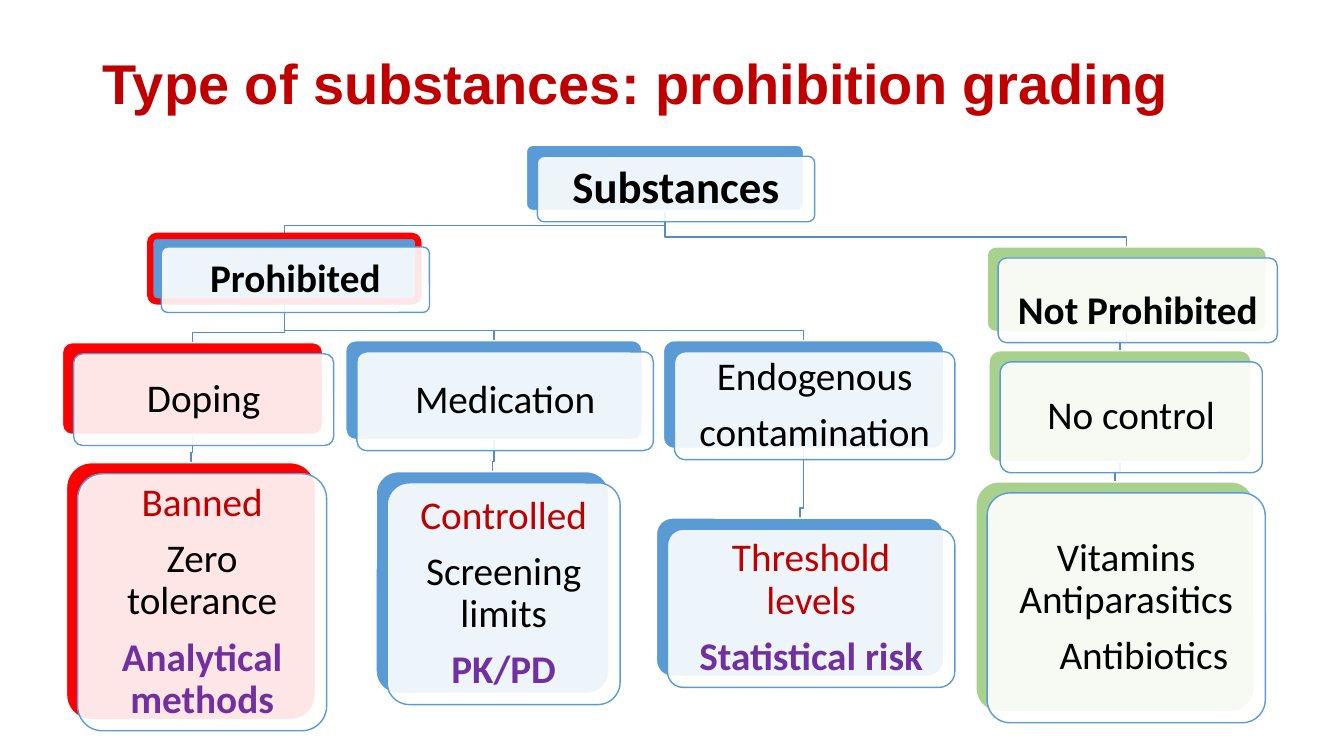
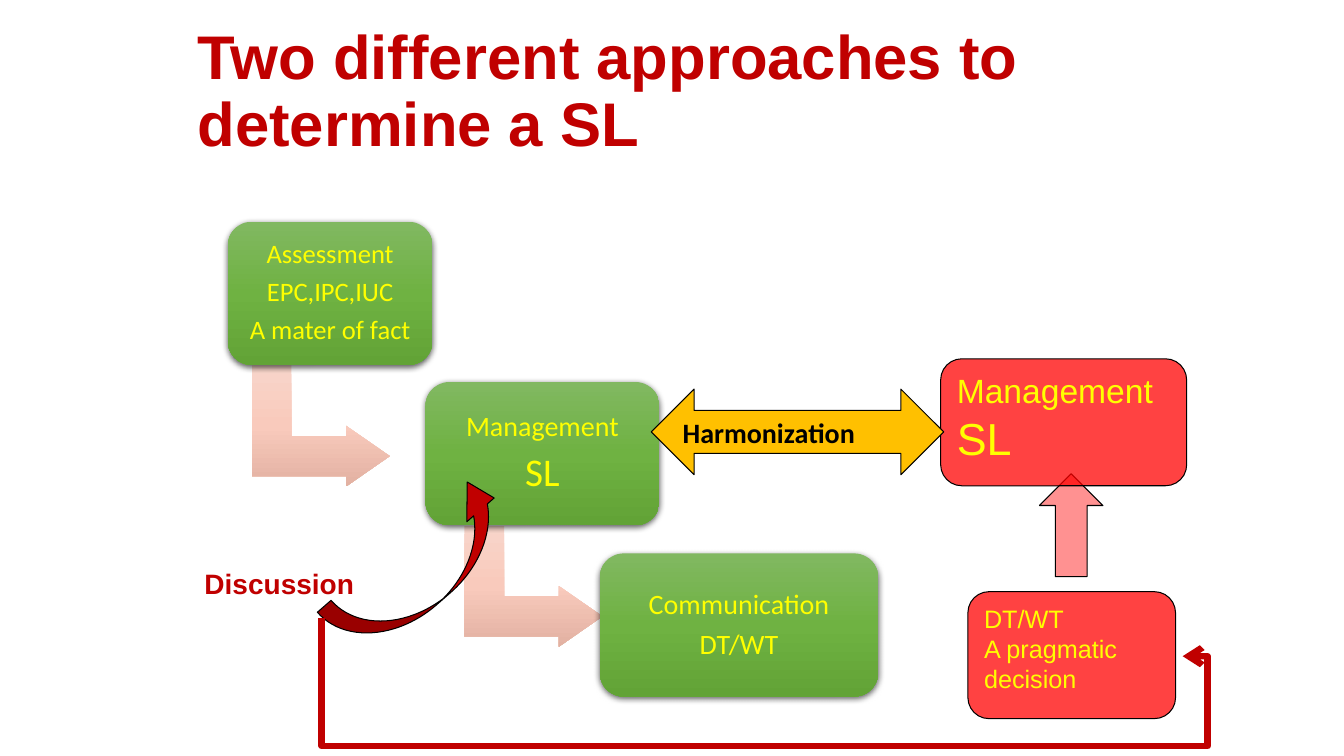
from lxml import etree
from pptx import Presentation
from pptx.dml.color import RGBColor
from pptx.enum.shapes import MSO_CONNECTOR, MSO_SHAPE
from pptx.enum.text import MSO_ANCHOR, MSO_AUTO_SIZE, PP_ALIGN
from pptx.oxml.ns import qn
from pptx.util import Inches, Pt

ROUNDED = MSO_SHAPE.ROUNDED_RECTANGLE
BENT_ARROW = MSO_SHAPE.BENT_UP_ARROW
UP_ARROW = MSO_SHAPE.UP_ARROW
DOUBLE_ARROW = MSO_SHAPE.LEFT_RIGHT_ARROW
CURVED_ARROW = MSO_SHAPE.CURVED_UP_ARROW
ELBOW = MSO_CONNECTOR.ELBOW
LEFT, CENTER = PP_ALIGN.LEFT, PP_ALIGN.CENTER
TOP, MIDDLE = MSO_ANCHOR.TOP, MSO_ANCHOR.MIDDLE
NO_FIT, GROW = MSO_AUTO_SIZE.NONE, MSO_AUTO_SIZE.SHAPE_TO_FIT_TEXT

WHITE = RGBColor(0xFF, 0xFF, 0xFF)
BLACK = RGBColor(0, 0, 0)
CRIMSON = RGBColor(0xC0, 0, 0)
RED = RGBColor(0xFF, 0, 0)
BLUE = RGBColor(0x5B, 0x9B, 0xD5)
LINK_BLUE = RGBColor(0x53, 0x8D, 0xC1)
GREEN = RGBColor(0xA9, 0xD1, 0x8E)
PURPLE = RGBColor(0x70, 0x30, 0xA0)
YELLOW = RGBColor(0xFF, 0xFF, 0)
AMBER = RGBColor(0xFF, 0xC0, 0)
GREEN_STOPS = ((0, "81B861"), (50, "6FB242"), (100, "62A336"))
PEACH_STOPS = ((0, "F8D5CA"), (50, "F9CABC"), (100, "E2B1A2"))

HEADING, BODY = "Arial", "Calibri"
CARD_OFFSET = 0.11
LINK_DROP = 0.1
SPACING = 0.35

SUBSTANCES = (5.22, 1.44, 2.75, 0.65)
PROHIBITED = (1.49, 2.34, 2.66, 0.65)
NOT_PROHIBITED = (9.79, 2.45, 2.77, 0.84)
DOPING = (0.62, 3.4, 2.58, 0.91)
MEDICATION = (3.43, 3.38, 2.94, 0.98)
ENDOGENOUS = (6.58, 3.38, 2.78, 1.07)
NO_CONTROL = (9.81, 3.48, 2.6, 1.1)
BANNED = (0.66, 4.59, 2.47, 2.55)
CONTROLLED = (3.73, 4.68, 2.31, 2.2)
THRESHOLD = (6.51, 5.14, 2.85, 1.57)
VITAMINS = (9.68, 4.78, 2.76, 2.28)

LINKS = (
    (VITAMINS, NO_CONTROL), (NO_CONTROL, NOT_PROHIBITED),
    (NOT_PROHIBITED, SUBSTANCES), (THRESHOLD, ENDOGENOUS),
    (ENDOGENOUS, PROHIBITED), (CONTROLLED, MEDICATION),
    (MEDICATION, PROHIBITED), (BANNED, DOPING),
    (DOPING, PROHIBITED), (PROHIBITED, SUBSTANCES),
)
CARDS = (
    (SUBSTANCES, BLUE, [("Substances", 32, BLACK, True)]),
    (PROHIBITED, BLUE, [("Prohibited", 28, BLACK, True)]),
    (DOPING, RED, [("Doping", 28, BLACK, False)]),
    (BANNED, RED, [("Banned", 28, CRIMSON, False),
                   ("Zero tolerance", 28, BLACK, False),
                   ("Analytical methods", 28, PURPLE, True)]),
    (MEDICATION, BLUE, [("Medication", 28, BLACK, False)]),
    (CONTROLLED, BLUE, [("Controlled", 28, CRIMSON, False),
                        ("Screening limits", 28, BLACK, False),
                        ("PK/PD", 28, PURPLE, True)]),
    (ENDOGENOUS, BLUE, [("Endogenous", 28, BLACK, False),
                        ("contamination", 28, BLACK, False)]),
    (THRESHOLD, BLUE, [("Threshold levels", 28, CRIMSON, False),
                       ("Statistical risk", 28, PURPLE, True)]),
    (NOT_PROHIBITED, GREEN, [("Not Prohibited", 28, BLACK, True)]),
    (NO_CONTROL, GREEN, [("No control", 28, BLACK, False)]),
    (VITAMINS, GREEN, [("Vitamins Antiparasitics", 28, BLACK, False),
                       ("Antibiotics", 28, BLACK, False)]),
)
STEPS = (
    ((2.26, 2.2, 2.03, 1.42), (2.58, 3.54),
     [("Assessment", 19, YELLOW, False), ("EPC,IPC,IUC", 19, YELLOW, False),
      ("A mater of fact", 19, YELLOW, False)]),
    ((4.22, 3.79, 2.32, 1.42), (4.69, 5.13),
     [("Management", 20, YELLOW, False), ("SL", 28, YELLOW, False)]),
    ((5.95, 5.49, 2.76, 1.42), None,
     [("Communication", 20, YELLOW, False), ("DT/WT", 20, YELLOW, False)]),
)
PRAGMATIC_STEPS = (
    ((9.6, 5.87, 2.06, 1.26),
     [("DT/WT", 18, YELLOW, False), ("A pragmatic decision", 18, YELLOW, False)]),
    ((9.33, 3.56, 2.44, 1.26),
     [("Management", 24, YELLOW, False), ("SL", 32, YELLOW, False)]),
)


def add_titled_slide(prs, title, box, size):
    """Add a title-only slide with the shared title style."""
    slide = prs.slides.add_slide(prs.slide_layouts[5])
    heading = slide.shapes.title
    heading.left, heading.top, heading.width, heading.height = map(Inches, box)
    write(heading.text_frame, [(title, size, CRIMSON, True)], HEADING, LEFT, MIDDLE, 0.9)
    heading.text_frame.auto_size = NO_FIT
    return slide


def write(frame, lines, font, align, anchor, line_spacing=None, gap=0):
    """Fill a text frame with (text, size, colour, bold) paragraphs."""
    frame.word_wrap = True
    frame.vertical_anchor = anchor
    for index, (text, size, color, bold) in enumerate(lines):
        paragraph = frame.add_paragraph() if index else frame.paragraphs[0]
        paragraph.text = text
        paragraph.alignment = align
        paragraph.line_spacing = line_spacing
        paragraph.font.name = font
        paragraph.font.size = Pt(size)
        paragraph.font.bold = bold
        paragraph.font.color.rgb = color
        if gap and index < len(lines) - 1:
            paragraph.space_after = Pt(round(gap * size, 1))


def set_margins(frame, margin):
    """Give a text frame the same inset on all sides."""
    frame.margin_left = frame.margin_right = Inches(margin)
    frame.margin_top = frame.margin_bottom = Inches(margin)


def add_block(slide, kind, box, fill=None, line=None, width=1.0, opacity=None, adjust=()):
    """Add a preset shape without shadow, optionally translucent."""
    block = slide.shapes.add_shape(kind, *map(Inches, box))
    block.shadow.inherit = False
    for index, value in enumerate(adjust):
        block.adjustments[index] = value
    if fill is not None:
        block.fill.solid()
        block.fill.fore_color.rgb = fill
    if opacity is not None:
        color = block._element.spPr.find(qn("a:solidFill"))[0]
        etree.SubElement(color, qn("a:alpha"), val=str(opacity * 1000))
    if line is None:
        block.line.fill.background()
    else:
        block.line.color.rgb = line
        block.line.width = Pt(width)
    return block


def shade(block, stops):
    """Fill a shape with an upright gradient of several stops."""
    block.fill.gradient()
    block.fill.gradient_angle = 270
    gradient = block._element.spPr.find(qn("a:gradFill"))
    gradient.set("rotWithShape", "0")
    stop_list = gradient.find(qn("a:gsLst"))
    for old_stop in list(stop_list):
        stop_list.remove(old_stop)
    for position, color in stops:
        stop = etree.SubElement(stop_list, qn("a:gs"), pos=str(position * 1000))
        etree.SubElement(stop, qn("a:srgbClr"), val=color)


def drop_shadow(block):
    """Cast a soft black shadow downwards."""
    effects = block._element.spPr.find(qn("a:effectLst"))
    shadow = etree.SubElement(effects, qn("a:outerShdw"), blurRad=str(Pt(4.5)),
                              dist=str(Pt(1.5)), dir="5400000", rotWithShape="0")
    color = etree.SubElement(shadow, qn("a:srgbClr"), val="000000")
    etree.SubElement(color, qn("a:alpha"), val="63000")


def add_link(slide, child, parent):
    """Draw the stepped line from a parent card down to a child card."""
    start_x, start_y = parent[0] + parent[2] / 2, parent[1] + parent[3]
    end_x, end_y = child[0] + child[2] / 2, child[1]
    bend_y = end_y - LINK_DROP
    route = [(start_x, bend_y), (end_x, bend_y), (end_x, end_y)]
    builder = slide.shapes.build_freeform(Inches(start_x), Inches(start_y))
    builder.add_line_segments([(Inches(x), Inches(y)) for x, y in route], close=False)
    link = builder.convert_to_shape()
    link.shadow.inherit = False
    link.fill.background()
    link.line.color.rgb = LINK_BLUE
    link.line.width = Pt(1)


def add_card(slide, box, color, lines):
    """Add a coloured card with an offset, nearly white text card on it."""
    left, top, width, height = box
    outlined = box == PROHIBITED
    add_block(slide, ROUNDED, box, color, RED if outlined else WHITE,
              4.5 if outlined else 1, adjust=(0.1,))
    front_box = (left + CARD_OFFSET, top + CARD_OFFSET, width, height)
    front = add_block(slide, ROUNDED, front_box, WHITE, BLUE, opacity=90, adjust=(0.1,))
    set_margins(front.text_frame, 0.12)
    write(front.text_frame, lines, BODY, CENTER, MIDDLE, 0.9, SPACING)
    return front


def add_step(slide, box, arrow_at, lines):
    """Add a green step and the bent arrow leading on from it."""
    if arrow_at:
        arrow = add_block(slide, BENT_ARROW, (*arrow_at, 1.2, 1.37),
                          adjust=(0.33, 0.25, 0.36))
        arrow.rotation = 90
        shade(arrow, PEACH_STOPS)
    step = add_block(slide, ROUNDED, box)
    shade(step, GREEN_STOPS)
    drop_shadow(step)
    set_margins(step.text_frame, 0.08)
    write(step.text_frame, lines, BODY, CENTER, MIDDLE, 0.9, SPACING)


def add_feedback_line(slide):
    """Draw the thick elbow arrow from the discussion to the decision."""
    left, top, width, height = 7.27, 2.05, 0.38, 8.54
    feedback = slide.shapes.add_connector(
        ELBOW, *map(Inches, (left, top, left + width, top + height)))
    feedback.line.color.rgb = CRIMSON
    feedback.line.width = Pt(4.5)
    properties = feedback._element.spPr
    frame = properties.find(qn("a:xfrm"))
    frame.set("rot", str(270 * 60000))
    frame.set("flipH", "1")
    geometry = properties.find(qn("a:prstGeom"))
    geometry.set("prst", "bentConnector4")
    guides = geometry.find(qn("a:avLst"))
    for name, value in (("adj1", 335000), ("adj2", 102900)):
        etree.SubElement(guides, qn("a:gd"), name=name, fmla=f"val {value}")
    etree.SubElement(properties.find(qn("a:ln")), qn("a:tailEnd"), type="arrow")
    etree.SubElement(properties, qn("a:effectLst"))


def build_grading(prs):
    """Build the tree of substance types."""
    slide = add_titled_slide(prs, "Type of substances: prohibition grading",
                             (0.92, 0.4, 11.5, 0.92), 40)
    for child, parent in LINKS:
        add_link(slide, child, parent)
    fronts = {box: add_card(slide, box, color, lines) for box, color, lines in CARDS}
    low_label = fronts[NOT_PROHIBITED].text_frame
    low_label.margin_top, low_label.margin_bottom = Inches(0.31), Inches(0.08)
    antibiotics = fronts[VITAMINS].text_frame.paragraphs[1]
    antibiotics._p.get_or_add_pPr().set("marL", str(Inches(0.35)))


def build_approaches(prs):
    """Build the two routes to a screening limit and their links."""
    slide = add_titled_slide(prs, "Two different approaches to determine a SL",
                             (1.86, 0.2, 9.3, 1.45), 44)
    for box, arrow_at, lines in STEPS:
        add_step(slide, box, arrow_at, lines)
    add_block(slide, UP_ARROW, (10.31, 4.7, 0.63, 1.02), RED, BLACK, 0.75, 43)
    for box, lines in PRAGMATIC_STEPS:
        step = add_block(slide, ROUNDED, box, RED, BLACK, 0.75, 74)
        write(step.text_frame, lines, HEADING, LEFT, TOP)
    harmonization = add_block(slide, DOUBLE_ARROW, (6.46, 3.86, 2.9, 0.85),
                              AMBER, BLACK, 0.75)
    write(harmonization.text_frame, [("Harmonization", 20, BLACK, True)], BODY, LEFT, TOP)
    discussion = slide.shapes.add_textbox(*map(Inches, (1.93, 5.57, 1.7, 0.44)))
    write(discussion.text_frame, [("Discussion", 20, CRIMSON, True)], HEADING, LEFT, TOP)
    discussion.text_frame.word_wrap = False
    discussion.text_frame.auto_size = GROW
    swoosh = add_block(slide, CURVED_ARROW, (3.12, 5.28, 2.15, 0.72), CRIMSON, BLACK,
                       0.75, adjust=(0.25, 0.5, 0.41))
    swoosh.rotation = 319
    add_feedback_line(slide)


def main():
    """Create the presentation and save it."""
    prs = Presentation()
    prs.slide_width, prs.slide_height = Inches(13.33), Inches(7.5)
    build_grading(prs)
    build_approaches(prs)
    prs.save("out.pptx")


if __name__ == "__main__":
    main()
